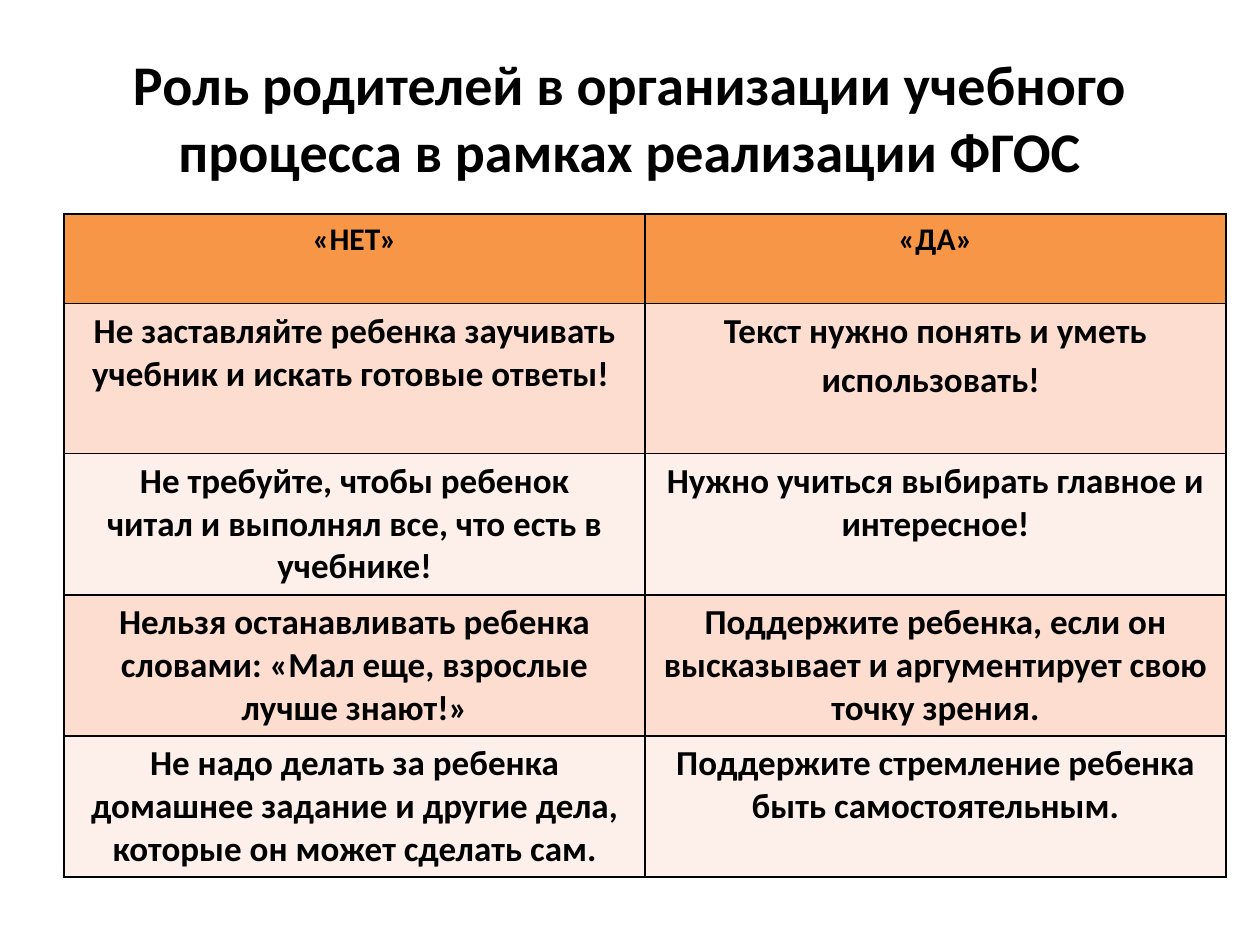
from dataclasses import dataclass

from lxml import etree
from pptx import Presentation
from pptx import util as u
from pptx.dml.color import RGBColor
from pptx.enum import text
from pptx.oxml import ns


@dataclass(frozen=True)
class Theme:
    font: str = "Calibri"
    ink: str = "000000"
    header: str = "F79646"
    bands: tuple[str, str] = ("FCDDCF", "FDEFE9")
    title_size: int = 32
    header_size: int = 18
    body_size: int = 20
    tail_size: int = 24
    border: float = 1


@dataclass(frozen=True)
class Span:
    words: str
    size: int
    new_line: bool = False


@dataclass(frozen=True)
class Row:
    height: float
    fill: str
    no: tuple[Span, ...]
    yes: tuple[Span, ...]


THEME = Theme()
WIDTH, HEIGHT = u.Inches(10), u.Inches(7.5)
TITLE = "Роль родителей в организации учебного процесса в рамках реализации ФГОС"


def body(words: str, new_line: bool = False) -> Span:
    return Span(words, THEME.body_size, new_line)


ROWS = (
    Row(0.71, THEME.header,
        (Span("«НЕТ»", THEME.header_size),),
        (Span("«ДА»", THEME.header_size),)),
    Row(1.19, THEME.bands[0],
        (body("Не заставляйте ребенка заучивать учебник и искать готовые ответы! "),),
        (body("Текст нужно понять и уметь использовать!"),
         Span(" ", THEME.tail_size))),
    Row(1.12, THEME.bands[1],
        (body("Не требуйте, чтобы ребенок"),
         body("читал и выполнял все, что есть в учебнике!", new_line=True)),
        (body("Нужно учиться выбирать главное и интересное!"),)),
    Row(1.12, THEME.bands[0],
        (body("Нельзя останавливать ребенка словами: «Мал еще, взрослые лучше знают!»"),),
        (body("Поддержите ребенка, если он высказывает и аргументирует свою точку зрения."),)),
    Row(1.12, THEME.bands[1],
        (body("Не надо делать за ребенка домашнее задание и другие дела, "
              "которые он может сделать сам."),),
        (body("Поддержите стремление ребенка быть самостоятельным."),)),
)


def write(frame, spans: tuple[Span, ...]) -> None:
    para = frame.paragraphs[0]
    para.alignment = text.PP_ALIGN.CENTER
    for span in spans:
        if span.new_line:
            para.add_line_break()
        run = para.add_run()
        run.text = span.words
        run.font.name = THEME.font
        run.font.size = u.Pt(span.size)
        run.font.bold = True
        run.font.color.rgb = RGBColor.from_string(THEME.ink)


def add_borders(cell) -> None:
    properties = cell._tc.get_or_add_tcPr()
    for index, side in enumerate(("lnL", "lnR", "lnT", "lnB")):
        line = etree.Element(ns.qn(f"a:{side}"), w=str(u.Pt(THEME.border)))
        fill = etree.SubElement(line, ns.qn("a:solidFill"))
        etree.SubElement(fill, ns.qn("a:srgbClr"), val=THEME.ink)
        properties.insert(index, line)


def add_title(slide) -> None:
    title = slide.shapes.title
    title.left, title.top = int(WIDTH * 0.05), int(HEIGHT * 0.04)
    title.width, title.height = int(WIDTH * 0.9), u.Inches(1.25)
    title.text_frame.word_wrap = True
    title.text_frame.vertical_anchor = text.MSO_ANCHOR.MIDDLE
    write(title.text_frame, (Span(TITLE, THEME.title_size),))


def add_advice_table(slide) -> None:
    table = slide.shapes.add_table(
        len(ROWS), 2, u.Inches(0.51), u.Inches(1.7), u.Inches(9.22),
        u.Inches(sum(row.height for row in ROWS))).table
    table.horz_banding = False
    for index, row in enumerate(ROWS):
        table.rows[index].height = u.Inches(row.height)
        for column, spans in enumerate((row.no, row.yes)):
            cell = table.cell(index, column)
            cell.fill.solid()
            cell.fill.fore_color.rgb = RGBColor.from_string(row.fill)
            add_borders(cell)
            write(cell.text_frame, spans)


def main() -> None:
    deck = Presentation()
    deck.slide_width, deck.slide_height = WIDTH, HEIGHT
    slide = deck.slides.add_slide(deck.slide_layouts[5])
    add_title(slide)
    add_advice_table(slide)
    deck.save("out.pptx")


if __name__ == "__main__":
    main()
